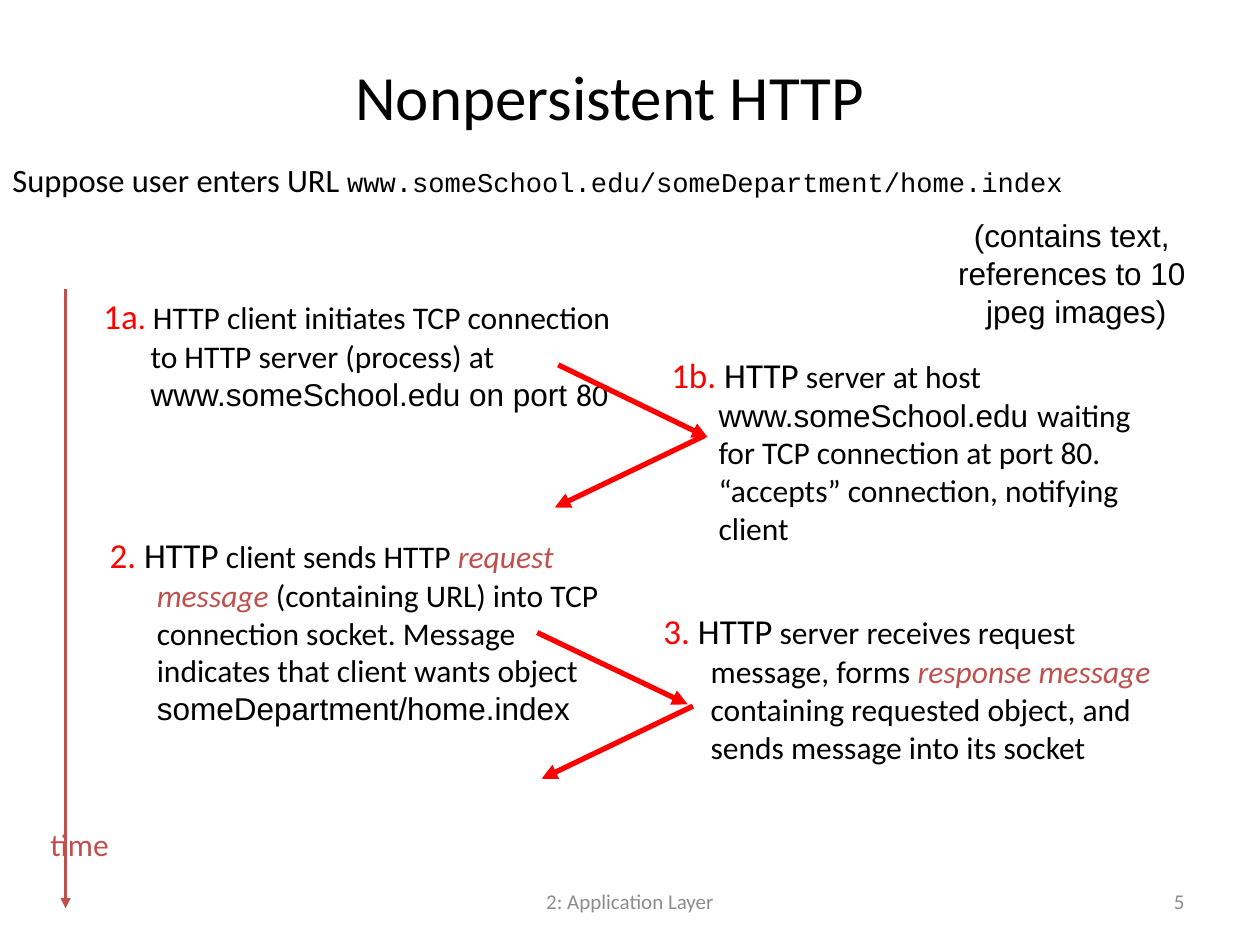
from lxml import etree
from pptx import Presentation
from pptx.dml.color import RGBColor
from pptx.enum.shapes import MSO_CONNECTOR
from pptx.enum.text import MSO_ANCHOR as ANCHOR, PP_ALIGN as ALIGN
from pptx.oxml.ns import qn
from pptx.util import Pt

BLACK = RGBColor(0, 0, 0)
RED = RGBColor(0xFF, 0, 0)
BRICK = RGBColor(0xC0, 0x50, 0x4D)
GRAY = RGBColor(0x8C, 0x8C, 0x8C)

prs = Presentation()
prs.slide_width, prs.slide_height = Pt(720), Pt(540)
s = prs.slides.add_slide(prs.slide_layouts[5])


def write(sp, paragraphs, size=18, color=BLACK, font="Calibri", align=ALIGN.LEFT,
          anchor=ANCHOR.TOP, wrap=True, hanging=0, before=0):
    """Fill sp; each paragraph is a list of (text, overrides) runs."""
    tf = sp.text_frame
    tf.word_wrap = wrap
    tf.vertical_anchor = anchor
    for i, runs in enumerate(paragraphs):
        p = tf.add_paragraph() if i else tf.paragraphs[0]
        p.alignment = align
        p.space_before = Pt(before)
        if hanging:
            pPr = p._p.get_or_add_pPr()
            pPr.set("marL", str(Pt(hanging)))
            pPr.set("indent", str(-Pt(hanging)))
        for text, style in runs:
            r = p.add_run()
            r.text = text
            r.font.name = style.get("font", font)
            r.font.size = Pt(style.get("size", size))
            r.font.color.rgb = style.get("color", color)
            r.font.italic = style.get("italic", False)


def arrow(x1, y1, x2, y2, color, width):
    c = s.shapes.add_connector(MSO_CONNECTOR.STRAIGHT, Pt(x1), Pt(y1), Pt(x2), Pt(y2))
    c.line.color.rgb = color
    c.line.width = Pt(width)
    etree.SubElement(c.line._get_or_add_ln(), qn("a:tailEnd"), type="triangle")
    etree.SubElement(c._element.spPr, qn("a:effectLst"))


# Title
title = s.shapes.title
title.left, title.top, title.width, title.height = Pt(42.5), Pt(20), Pt(612), Pt(68.5)
write(title, [[("Nonpersistent HTTP", {})]], size=36, align=ALIGN.CENTER,
      anchor=ANCHOR.MIDDLE)

# Time axis
arrow(37.5, 165, 37.5, 519, BRICK, 1.5)

# Introduction and numbered steps, all with a hanging indent
number = {"size": 20, "color": RED}
large = {"size": 20}
arial = {"font": "Arial"}
term = {"color": BRICK, "italic": True}
steps = [
    (0, 88, 657, 37, 4, [
        ("Suppose user enters URL ", {"size": 18.6}),
        ("www.someSchool.edu/someDepartment/home.index",
         {"size": 15.5, "font": "Courier New"})]),
    (52, 165, 310, 150, 4, [
        ("1a", number), (".", {"color": RED}),
        (" HTTP client initiates TCP connection to HTTP server (process) at ", {}),
        ("www.someSchool.edu on port ", arial), ("80", {})]),
    (55.5, 301.5, 300, 85, 0, [
        ("2.", number), (" HTTP", large), (" client sends HTTP ", {}),
        ("request message", term),
        (" (containing URL) into TCP connection socket. Message indicates that "
         "client wants object ", {}),
        ("someDepartment/home.index", arial)]),
    (376.5, 198.5, 300, 119, 0, [
        ("1b.", number), (" HTTP", large), (" server at host ", {}),
        ("www.someSchool.edu ", arial),
        ("waiting for TCP connection at port 80. “accepts” connection, "
         "notifying client", {})]),
    (372, 345, 300, 142, 0, [
        ("3.", number), (" HTTP", large),
        (" server receives request message, forms ", {}),
        ("response message", term),
        (" containing requested object, and sends message into its socket", {})]),
]
for x, y, w, h, before, runs in steps:
    sp = s.shapes.add_textbox(Pt(x), Pt(y), Pt(w), Pt(h))
    write(sp, [runs], hanging=27, before=before)

# Messages between client and server
for ends in [(319, 208.5, 404.5, 250), (402.5, 249, 317, 290),
             (307, 361.5, 393, 402.5), (396, 403.5, 309.5, 445)]:
    arrow(*ends, RED, 3)

# Axis label and remark on the page
sp = s.shapes.add_textbox(Pt(13.5), Pt(468), Pt(64), Pt(36))
write(sp, [[("time", {})]], color=BRICK, align=ALIGN.CENTER, wrap=False)
sp = s.shapes.add_textbox(Pt(540), Pt(120), Pt(150), Pt(72))
remark = ["(contains text, ", "references to 10 ", "jpeg images)"]
write(sp, [[(line, {})] for line in remark], font="Arial", align=ALIGN.CENTER,
      wrap=False)

# Footer and slide number
for x, w, text, align in [(246, 228, "2: Application Layer", ALIGN.CENTER),
                          (516, 168, "5", ALIGN.RIGHT)]:
    sp = s.shapes.add_textbox(Pt(x), Pt(500.5), Pt(w), Pt(29))
    write(sp, [[(text, {})]], size=12, color=GRAY, align=align, anchor=ANCHOR.MIDDLE)

prs.save("out.pptx")
